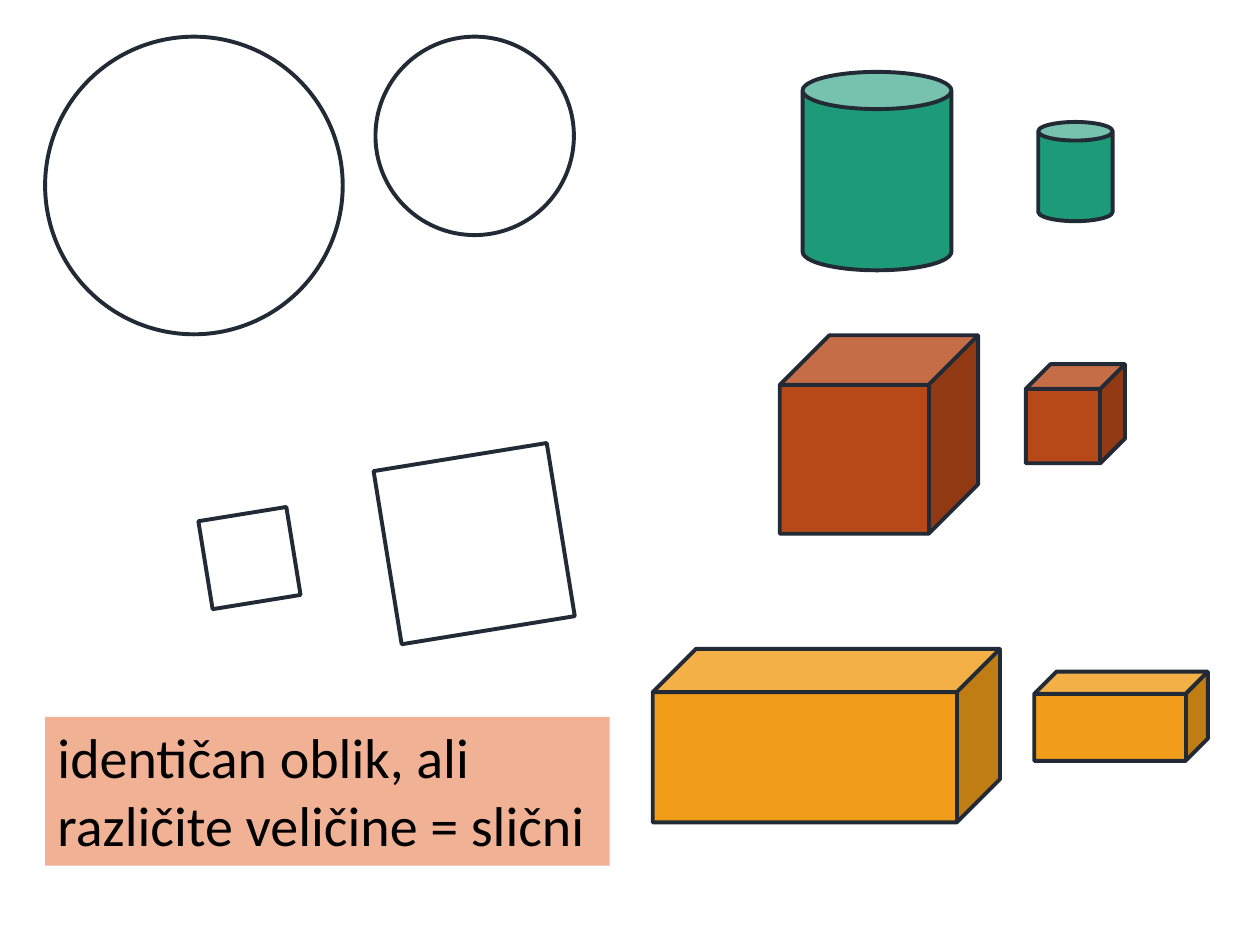
import pptx
import pptx.dml.color
import pptx.enum.shapes
import pptx.enum.text
import pptx.util
from pptx.util import Cm

WHITE = pptx.dml.color.RGBColor(0xFF, 0xFF, 0xFF)
BLACK = pptx.dml.color.RGBColor(0x00, 0x00, 0x00)
OUTLINE = pptx.dml.color.RGBColor(0x22, 0x2A, 0x35)
GREEN = pptx.dml.color.RGBColor(0x1D, 0x9A, 0x78)
RUST = pptx.dml.color.RGBColor(0xB7, 0x49, 0x19)
AMBER = pptx.dml.color.RGBColor(0xF1, 0x9D, 0x19)
PEACH = pptx.dml.color.RGBColor(0xF0, 0xB1, 0x95)

KIND = pptx.enum.shapes.MSO_SHAPE

# Each family of similar solids or figures: kind, fill, rotation,
# and its members as (left, top, width, height) in centimetres.
SIMILAR_FIGURES = [
    (KIND.OVAL, WHITE, 0, [(0.91, 0.74, 6, 6), (7.57, 0.74, 4, 4)]),
    (KIND.DIAMOND, WHITE, 305.8, [(3.76, 9.98, 2.54, 2.54), (7.06, 8.46, 5, 5)]),
    (KIND.CAN, GREEN, 0, [(16.18, 1.45, 3, 4), (20.93, 2.46, 1.5, 2)]),
    (KIND.CUBE, RUST, 0, [(15.72, 6.76, 4, 4), (20.68, 7.34, 2, 2)]),
    (KIND.CUBE, AMBER, 0, [(13.16, 13.08, 7, 3.5), (20.85, 13.54, 3.5, 1.8)]),
]

deck = pptx.Presentation()
deck.slide_width = Cm(25.4)
deck.slide_height = Cm(19.05)
slide = deck.slides.add_slide(deck.slide_layouts[6])

for kind, fill, rotation, members in SIMILAR_FIGURES:
    for bounds in members:
        figure = slide.shapes.add_shape(kind, *map(Cm, bounds))
        figure.shadow.inherit = False
        figure.rotation = rotation
        figure.fill.solid()
        figure.fill.fore_color.rgb = fill
        figure.line.color.rgb = OUTLINE
        figure.line.width = pptx.util.Pt(2.25)

conclusion = slide.shapes.add_textbox(Cm(0.91), Cm(14.45), Cm(11.38), Cm(3))
conclusion.fill.solid()
conclusion.fill.fore_color.rgb = PEACH
conclusion.text_frame.word_wrap = True
conclusion.text_frame.auto_size = pptx.enum.text.MSO_AUTO_SIZE.SHAPE_TO_FIT_TEXT
sentence = conclusion.text_frame.paragraphs[0].add_run()
sentence.text = "identičan oblik, ali različite veličine = slični"
sentence.font.color.rgb = BLACK
for attribute, value in {"name": "Calibri", "size": pptx.util.Pt(32)}.items():
    setattr(sentence.font, attribute, value)

deck.save("out.pptx")
